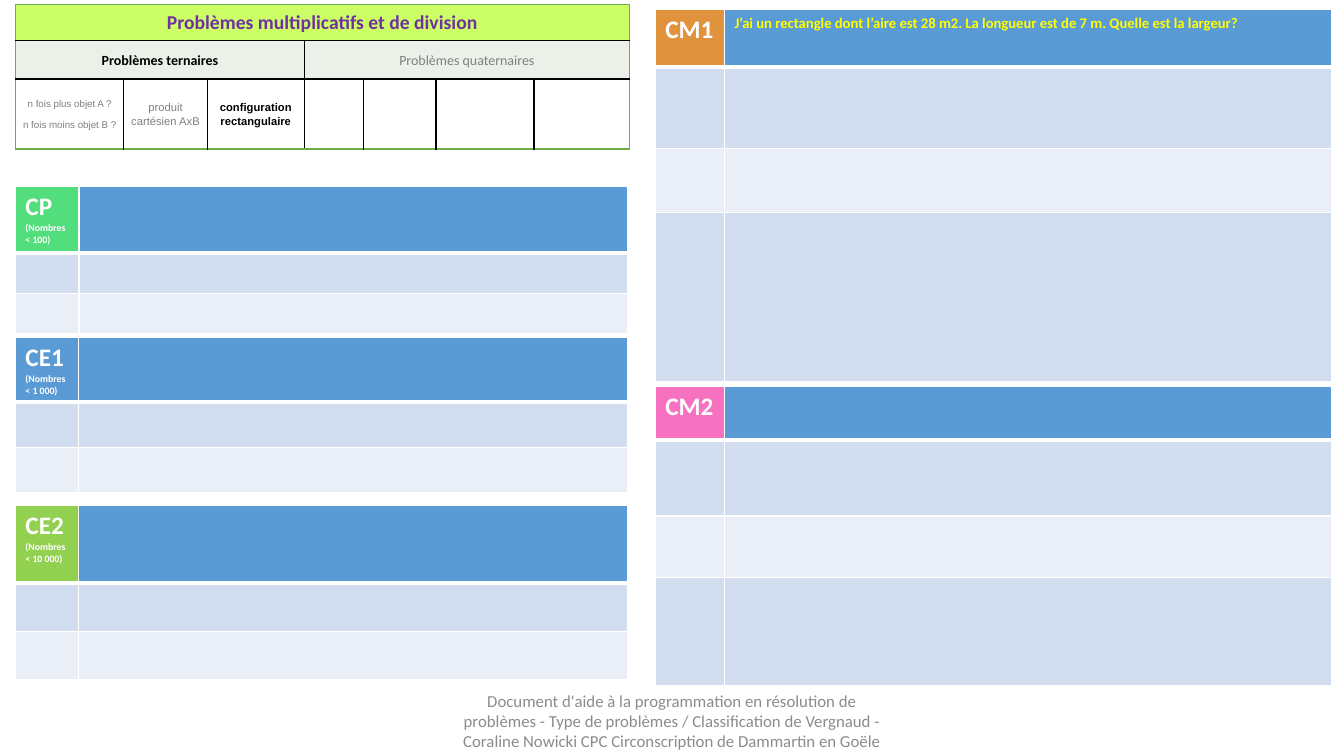
import pptx
import pptx.util
import pptx.dml.color
import pptx.enum.text
import pptx.oxml
import pptx.oxml.ns

Pt = pptx.util.Pt
MID = pptx.enum.text.MSO_ANCHOR.MIDDLE
CENTER = pptx.enum.text.PP_ALIGN.CENTER


class Theme:
    """Colours, fonts and type sizes of the slide."""
    body, plain = "Calibri", "Arial"
    white, black, gray, pale = "FFFFFF", "000000", "808080", "EBF1E9"
    foot, green, lime, purple = "8C8C8C", "70AD47", "CCFF66", "7030A0"
    blue, yellow = "5B9BD5", "FFFF00"
    bands = ("D2DEEF", "EAEFF7")
    title, grade, note, ask = 14, 18, 7, 10.5
    kind, small, tiny, foot_size = 10, 8, 7, 12


def color(code):
    """Turn a hex code into a colour."""
    return pptx.dml.color.RGBColor.from_string(code)


def style(para, size, tint, bold=False, face=Theme.body):
    """Set the font of one paragraph."""
    font = para.font
    font.name, font.size, font.bold = face, Pt(size), bold
    font.color.rgb = color(tint)


def write(frame, lines, size, tint, bold=False, face=Theme.body,
          space=1.07, gap=0):
    """Write centred lines that share one font."""
    for i, line in enumerate(lines):
        para = frame.add_paragraph() if i else frame.paragraphs[0]
        para.text, para.alignment, para.line_spacing = line, CENTER, space
        if i:
            para.space_before = Pt(gap)
        style(para, size, tint, bold, face)


def edge(cell, sides):
    """Draw cell borders from a map of side to colour and width."""
    props = cell._tc.get_or_add_tcPr()
    for side in "LRTB":
        tint, width = sides[side]
        props.append(pptx.oxml.parse_xml(
            f'<a:ln{side} {pptx.oxml.ns.nsdecls("a")} w="{Pt(width)}">'
            f'<a:solidFill><a:srgbClr val="{tint}"/></a:solidFill></a:ln{side}>'))


def paint(cell, tint):
    """Fill a cell with a solid colour."""
    cell.fill.solid()
    cell.fill.fore_color.rgb = color(tint)


def grid(slide, left, top, cols, rows):
    """Add a plain table with the given column widths and row heights."""
    table = slide.shapes.add_table(len(rows), len(cols), Pt(left), Pt(top),
                                   Pt(sum(cols)), Pt(sum(rows))).table
    table.first_row = table.horz_banding = False
    for col, width in zip(table.columns, cols):
        col.width = Pt(width)
    for row, height in zip(table.rows, rows):
        row.height = Pt(height)
    return table


def types(slide):
    """Add the table of problem types."""
    cols = (77.5, 59.5, 69.5, 42, 52, 70, 68)
    table = grid(slide, 11, 3, cols, (26, 27.5, 50))
    for row, start, end in ((0, 0, 6), (1, 0, 2), (1, 3, 6)):
        table.cell(row, start).merge(table.cell(row, end))
    inner, outer = (Theme.black, 1), (Theme.green, 1)
    for row, fill in enumerate((Theme.lime, Theme.pale, Theme.white)):
        for col in range(len(cols)):
            cell = table.cell(row, col)
            cell.margin_top = cell.margin_bottom = 0
            cell.margin_left = cell.margin_right = Pt(4.3)
            cell.vertical_anchor = MID
            if cell.is_spanned:
                continue
            last = col + cell.span_width == len(cols)
            edge(cell, {"L": inner if col else outer,
                        "R": outer if last else inner,
                        "T": inner if row else outer,
                        "B": outer if row == 2 else inner})
            paint(cell, fill)
    ternary = ["n fois plus objet A ?", "n fois moins objet B ?"]
    for row, col, lines, size, tint, bold, face in (
            (0, 0, ["Problèmes multiplicatifs et de division"],
             Theme.title, Theme.purple, True, Theme.body),
            (1, 0, ["Problèmes ternaires"],
             Theme.kind, Theme.black, True, Theme.body),
            (1, 3, ["Problèmes quaternaires"],
             Theme.kind, Theme.gray, False, Theme.body),
            (2, 0, ternary, Theme.tiny, Theme.gray, False, Theme.plain),
            (2, 1, ["produit cartésien AxB"],
             Theme.small, Theme.gray, False, Theme.plain),
            (2, 2, ["configuration rectangulaire"],
             Theme.small, Theme.black, True, Theme.plain)):
        write(table.cell(row, col).text_frame, lines, size, tint, bold, face,
              gap=7)


def level(slide, left, top, cols, rows, name, tint, note="", ask=""):
    """Add the banded table of one school level."""
    table = grid(slide, left, top, cols, rows)
    thin, thick = (Theme.white, 1), (Theme.white, 3)
    for row in range(len(rows)):
        for col in range(len(cols)):
            cell = table.cell(row, col)
            edge(cell, {"L": thin, "R": thin,
                        "T": thick if row == 1 else thin,
                        "B": thin if row else thick})
            head = Theme.blue if col else tint
            paint(cell, Theme.bands[(row - 1) % 2] if row else head)
    frame = table.cell(0, 0).text_frame
    frame.text = name
    style(frame.paragraphs[0], Theme.grade, Theme.white, True)
    if note:
        para = frame.add_paragraph()
        para.text = note
        style(para, Theme.note, Theme.white, True)
    if ask:
        frame = table.cell(0, 1).text_frame
        frame.text = ask
        style(frame.paragraphs[0], Theme.ask, Theme.yellow, True)


def footer(slide, text):
    """Add the centred footer."""
    frame = slide.shapes.add_textbox(Pt(318), Pt(500.5), Pt(324),
                                     Pt(29)).text_frame
    frame.word_wrap, frame.vertical_anchor = True, MID
    write(frame, [text], Theme.foot_size, Theme.foot, space=1)


def main():
    """Build the slide and save it."""
    deck = pptx.Presentation()
    deck.slide_width, deck.slide_height = Pt(960), Pt(540)
    slide = deck.slides.add_slide(deck.slide_layouts[6])
    footer(slide, "Document d'aide à la programmation en résolution de "
                  "problèmes - Type de problèmes / Classification de Vergnaud "
                  "- Coraline Nowicki CPC Circonscription de Dammartin en Goële")
    types(slide)
    slim, wide = (45, 392), (49.5, 433.5)
    level(slide, 11, 133, (45.5, 391.5), (47.5, 29, 29), "CP", "52DE7D",
          "(Nombres < 100)")
    level(slide, 11, 241, slim, (46, 32.5, 32.5), "CE1", Theme.blue,
          "(Nombres < 1 000)")
    level(slide, 11, 361, slim, (55.5, 34.5, 34.5), "CE2", "92D050",
          "(Nombres < 10 000)")
    level(slide, 468, 6.8, wide, (41, 58, 46, 121), "CM1", "E0923C",
          ask="J’ai un rectangle dont l’aire est 28 m2. La longueur est de "
              "7 m. Quelle est la largeur?")
    level(slide, 468, 276, wide, (38.5, 54, 44, 77), "CM2", "F771C1")
    deck.save("out.pptx")


if __name__ == "__main__":
    main()
